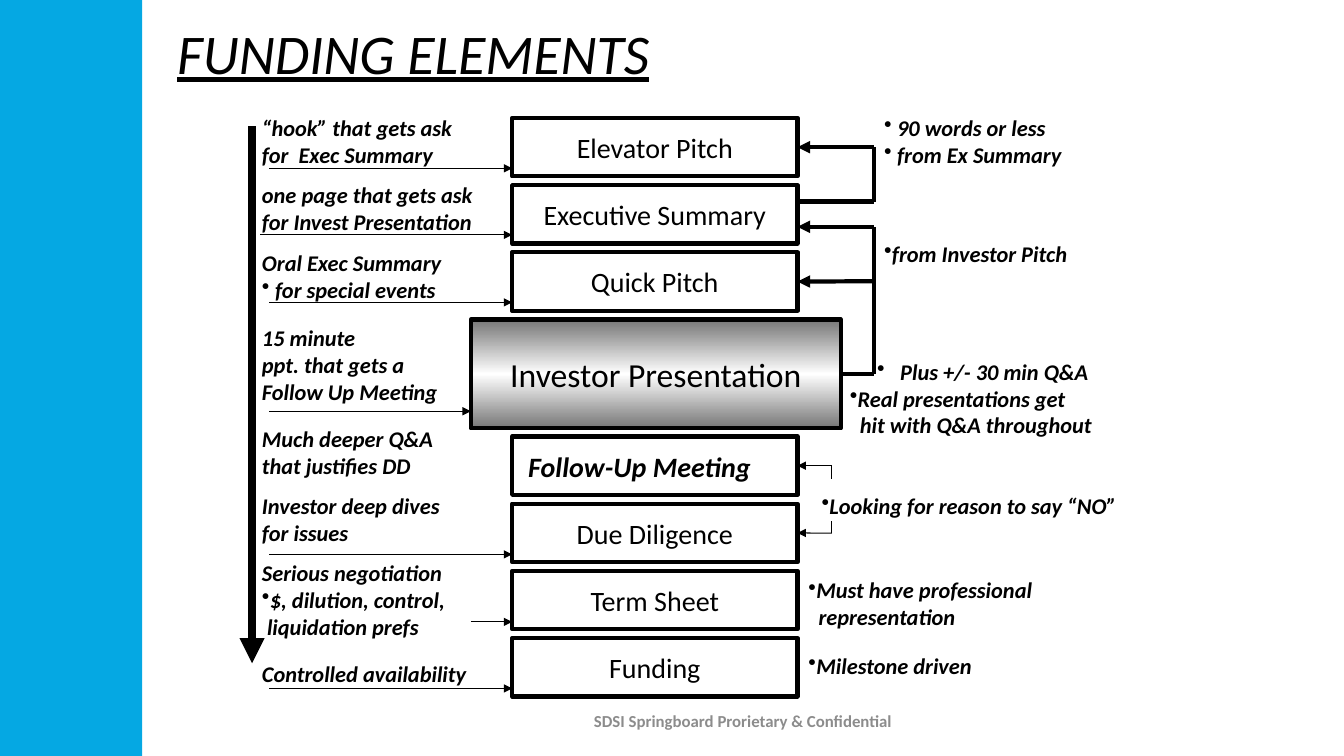
from copy import deepcopy
from dataclasses import dataclass

from lxml import etree
from pptx import Presentation
from pptx.dml.color import RGBColor
from pptx.enum.shapes import MSO_CONNECTOR, MSO_SHAPE
from pptx.enum.text import MSO_ANCHOR, MSO_AUTO_SIZE, PP_ALIGN
from pptx.oxml.ns import qn
from pptx.util import Inches, Pt

RECT = MSO_SHAPE.RECTANGLE
STRAIGHT = MSO_CONNECTOR.STRAIGHT
MIDDLE, TOP = MSO_ANCHOR.MIDDLE, MSO_ANCHOR.TOP
GROW, FIXED = MSO_AUTO_SIZE.SHAPE_TO_FIT_TEXT, MSO_AUTO_SIZE.NONE
LEFT, CENTER = PP_ALIGN.LEFT, PP_ALIGN.CENTER
RIGHT_SIDE = 3


@dataclass(frozen=True)
class Theme:
    font: str = "Calibri"
    ink: RGBColor = RGBColor(0, 0, 0)
    band: RGBColor = RGBColor(0x05, 0xA8, 0xE3)
    shade: RGBColor = RGBColor(0x76, 0x76, 0x76)
    glow: RGBColor = RGBColor(255, 255, 255)
    muted: RGBColor = RGBColor(0x8C, 0x8C, 0x8C)
    title: int = 40
    focus: int = 24
    step: int = 20
    note: int = 16
    foot: int = 12
    thin: float = 0.75
    bold: float = 3
    heavy: float = 6


@dataclass(frozen=True)
class Line:
    text: str
    mark: bool = False
    left: float = 0
    hang: float = 0


class Board:
    def __init__(self, slide, theme):
        self.shapes = slide.shapes
        self.theme = theme

    def words(self, par, text, size, color=None, bold=False, slant=False, under=False):
        run = par.add_run()
        run.text = text
        font = run.font
        font.name, font.size = self.theme.font, Pt(size)
        font.bold, font.italic, font.underline = bold, slant, under
        font.color.rgb = color or self.theme.ink

    def band(self, x, y, w, h):
        shape = self.shapes.add_shape(RECT, Inches(x), Inches(y), Inches(w), Inches(h))
        shape.shadow.inherit = False
        shape.fill.solid()
        shape.fill.fore_color.rgb = self.theme.band
        shape.line.fill.background()

    def box(self, x, y, w, h, text, size):
        shape = self.shapes.add_shape(RECT, Inches(x), Inches(y), Inches(w), Inches(h))
        shape.shadow.inherit = False
        shape.fill.background()
        shape.line.color.rgb = self.theme.ink
        shape.line.width = Pt(self.theme.bold)
        if text:
            frame = shape.text_frame
            frame.word_wrap = False
            frame.vertical_anchor = MIDDLE
            frame.paragraphs[0].alignment = CENTER
            self.words(frame.paragraphs[0], text, size)
        return shape

    def sheen(self, shape):
        shape.fill.gradient()
        shape.fill.gradient_angle = 90
        stops = shape._element.spPr.find(".//" + qn("a:gsLst"))
        stops.append(deepcopy(stops[-1]))
        tones = (self.theme.shade, self.theme.glow, self.theme.shade)
        for stop, tone, place in zip(shape.fill.gradient_stops, tones, (0, 0.5, 1)):
            stop.color.rgb = tone
            stop.position = place

    def link(self, start, end, weight, arrow=False, source=None, target=None):
        wire = self.shapes.add_connector(STRAIGHT, *map(Inches, start + end))
        wire.line.color.rgb = self.theme.ink
        wire.line.width = Pt(weight)
        if source is not None:
            wire.begin_connect(source, RIGHT_SIDE)
        if target is not None:
            wire.end_connect(target, RIGHT_SIDE)
        props = wire._element.spPr
        if arrow:
            etree.SubElement(props.find(qn("a:ln")), qn("a:tailEnd"), type="triangle")
        etree.SubElement(props, qn("a:effectLst"))

    def text(self, x, y, w, h, lines, size, wrap=False, align=LEFT, anchor=TOP, **style):
        area = self.shapes.add_textbox(Inches(x), Inches(y), Inches(w), Inches(h))
        frame = area.text_frame
        frame.word_wrap = wrap
        frame.auto_size = FIXED if wrap else GROW
        frame.vertical_anchor = anchor
        for i, line in enumerate(lines):
            par = frame.add_paragraph() if i else frame.paragraphs[0]
            par.alignment = align
            props = par._p.get_or_add_pPr()
            props.set("marL", str(Inches(line.left)))
            props.set("indent", str(Inches(-line.hang)))
            if line.mark:
                etree.SubElement(props, qn("a:buChar"), char="•")
            self.words(par, line.text, size, **style)

    def note(self, x, y, w, *lines):
        self.text(x, y, w, 0.1 + 0.27 * len(lines), lines, self.theme.note,
                  bold=True, slant=True)


NOTES = [
    (2.5, 1.08, 2.11, Line("“hook” that gets ask"), Line("for  Exec Summary")),
    (2.5, 1.75, 2.32, Line("one page that gets ask"), Line("for Invest Presentation")),
    (2.5, 2.42, 2.01, Line("Oral Exec Summary"),
     Line("for special events", True, 0.13, 0.13)),
    (2.5, 3.17, 1.97, Line("15 minute"), Line("ppt. that gets a"),
     Line("Follow Up Meeting")),
    (2.5, 4.17, 1.93, Line("Much deeper Q&A"), Line("that justifies DD")),
    (2.5, 4.83, 1.99, Line("Investor deep dives"), Line("for issues")),
    (2.5, 5.5, 2.08, Line("Serious negotiation"), Line("$, dilution, control,", True),
     Line("liquidation prefs", left=0.05)),
    (2.5, 6.5, 2.25, Line("Controlled availability")),
    (8.67, 1.08, 2.02, Line("90 words or less", True, 0.13, 0.13),
     Line("from Ex Summary", True, 0.13, 0.13)),
    (8.67, 2.33, 2.08, Line("from Investor Pitch", True)),
    (8.33, 3.5, 2.71, Line("Plus +/- 30 min Q&A", True, 0.5, 0.23),
     Line("Real presentations get", True), Line("hit with Q&A throughout", left=0.1)),
    (8.05, 4.83, 3.21, Line("Looking for reason to say “NO”", True)),
    (7.92, 5.67, 2.54, Line("Must have professional", True),
     Line("representation", left=0.1)),
    (7.92, 6.42, 1.88, Line("Milestone driven", True)),
]

STEPS = [
    (1.17, ("Elevator Pitch", "Executive Summary", "Quick Pitch")),
    (4.33, ("", "Due Diligence", "Term Sheet", "Funding")),
]

LEADS = [
    (2.67, 5.08, 1.67), (2.58, 5.08, 2.33), (2.67, 5.08, 3), (2.67, 4.67, 4.08),
    (2.67, 5.08, 5.5), (4.67, 5.08, 6.17), (2.67, 5.08, 6.83),
]


def main():
    deck = Presentation()
    deck.slide_width, deck.slide_height = Inches(13.33), Inches(7.5)
    theme = Theme()
    board = Board(deck.slides.add_slide(deck.slide_layouts[6]), theme)

    board.band(0, 0, 1.41, 7.5)
    board.text(1.66, 0.13, 5, 0.77, [Line("FUNDING ELEMENTS")], theme.title,
               slant=True, under=True)

    steps = {}
    for top, names in STEPS:
        for i, name in enumerate(names):
            steps[name] = board.box(5.08, top + i * 2 / 3, 2.83, 0.58, name, theme.step)
    pitch = board.box(4.67, 3.17, 3.67, 1.08, "Investor Presentation", theme.focus)
    board.sheen(pitch)

    edge, bend, nook = 7.91, 8.67, 8.25
    board.link((8.34, 3.71), (bend, 3.71), theme.bold, source=pitch)
    board.link((bend, 3.71), (bend, 2.25), theme.bold)
    board.link((bend, 2.79), (edge, 2.79), theme.bold, True, target=steps["Quick Pitch"])
    board.link((bend, 2.25), (edge, 2.25), theme.bold, True)
    board.link((edge, 2), (bend, 2), theme.bold)
    board.link((bend, 2), (bend, 1.46), theme.bold)
    board.link((bend, 1.46), (edge, 1.46), theme.bold, True, target=steps["Elevator Pitch"])
    board.link((2.5, 1.25), (2.5, 6.58), theme.heavy, True)
    for start, end, y in LEADS:
        board.link((start, y), (end, y), theme.thin, True)
    for y, turn, name in ((4.75, 4.62, ""), (5.17, 5.29, "Due Diligence")):
        board.link((nook, y), (nook, turn), theme.thin)
        board.link((nook, turn), (edge, turn), theme.thin, True, target=steps[name])

    for note in NOTES:
        board.note(*note)
    board.text(5.14, 4.41, 2.42, 0.44, [Line("Follow-Up Meeting")], theme.step,
               bold=True, slant=True)
    board.text(5.12, 6.95, 4.5, 0.4, [Line("SDSI Springboard Prorietary & Confidential")],
               theme.foot, wrap=True, align=CENTER, anchor=MIDDLE,
               color=theme.muted, bold=True)
    deck.save("out.pptx")


if __name__ == "__main__":
    main()
